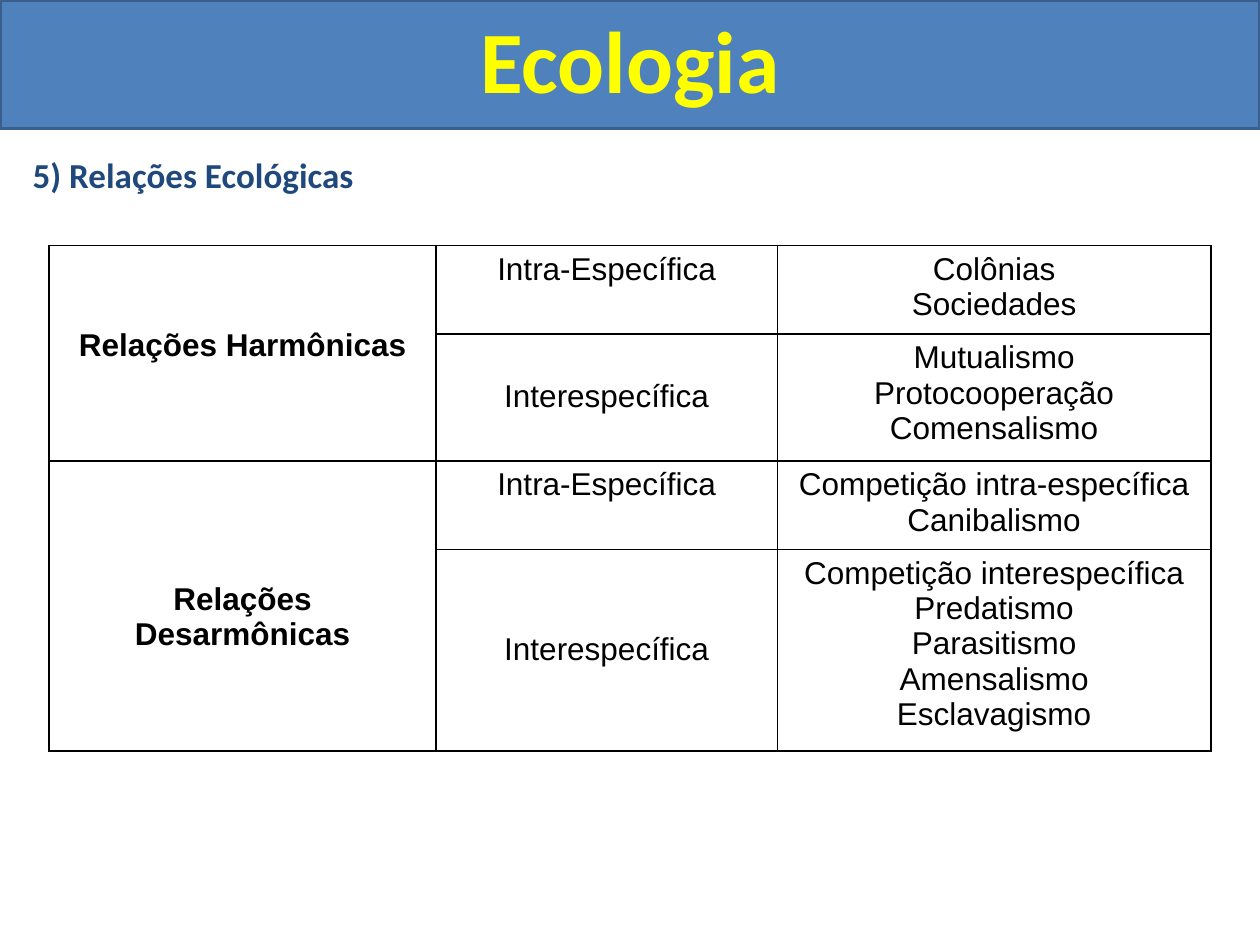
from lxml import etree
from pptx import Presentation
from pptx import util as u
from pptx.dml.color import RGBColor
from pptx.enum import shapes, text
from pptx.oxml.ns import qn

# Content
TITLE = "Ecologia"
HEADING = "5) Relações Ecológicas"
# group, then (kind, blank lines above the kind, examples)
RELATIONS = [
    ("Relações Harmônicas", 2, [
        ("Intra-Específica", 0, ["Colônias", "Sociedades"]),
        ("Interespecífica", 1, ["Mutualismo", "Protocooperação", "Comensalismo"]),
    ]),
    ("Relações Desarmônicas", 3, [
        ("Intra-Específica", 0, ["Competição intra-específica", "Canibalismo"]),
        ("Interespecífica", 2, ["Competição interespecífica", "Predatismo",
                                "Parasitismo", "Amensalismo", "Esclavagismo"]),
    ]),
]
COLORS = {"band": "4F81BD", "band_line": "3A5F8C", "title": "FFFF00",
          "heading": "1F497D", "table": "000000"}
COLUMN_WIDTHS = [7.8, 6.88, 8.74]
ROW_HEIGHTS = [1.78, 2.54, 1.78, 4.06]
LINE_DROP = 0.77
INSET = 0.13


def rgb(name):
    return RGBColor.from_string(COLORS[name])


def style(paragraph, size, face, color, bold, align):
    paragraph.alignment = align
    font = paragraph.font
    font.size, font.name, font.bold = u.Pt(size), face, bold
    font.color.rgb = rgb(color)


def add_label(slide, words, box, size, color, align):
    label = slide.shapes.add_textbox(*map(u.Cm, box)).text_frame
    label.word_wrap = True
    label.text = words
    style(label.paragraphs[0], size, "Calibri", color, True, align)


def add_borders(cell):
    properties = cell._tc.get_or_add_tcPr()
    for place, side in enumerate(("a:lnL", "a:lnR", "a:lnT", "a:lnB")):
        line = etree.Element(qn(side), w=str(u.Pt(1)))
        fill = etree.SubElement(line, qn("a:solidFill"))
        etree.SubElement(fill, qn("a:srgbClr"), val=COLORS["table"])
        properties.insert(place, line)


def fill_cell(cell, lines, drop=0, bold=False):
    cell.text = "\n".join(lines)
    cell.margin_top = u.Cm(INSET + drop * LINE_DROP)
    for paragraph in cell.text_frame.paragraphs:
        style(paragraph, 18, "Arial", "table", bold, text.PP_ALIGN.CENTER)


def main():
    prs = Presentation()
    prs.slide_width, prs.slide_height = u.Cm(25.4), u.Cm(19.05)
    slide = prs.slides.add_slide(prs.slide_layouts[6])

    # Section heading
    add_label(slide, HEADING, (0.41, 2.97, 24.41, 9.58), 20, "heading",
              text.PP_ALIGN.LEFT)

    # Title band
    band = slide.shapes.add_shape(shapes.MSO_SHAPE.RECTANGLE, 0, 0,
                                  prs.slide_width, u.Cm(2.59))
    band.shadow.inherit = False
    band.fill.solid()
    band.fill.fore_color.rgb = rgb("band")
    band.line.color.rgb = rgb("band_line")
    band.line.width = u.Pt(2)
    add_label(slide, TITLE, (0, 0, 25.4, 3.15), 50, "title",
              text.PP_ALIGN.CENTER)

    # Table of relations
    relations = slide.shapes.add_table(
        len(ROW_HEIGHTS), len(COLUMN_WIDTHS), u.Cm(0.99), u.Cm(4.95),
        u.Cm(sum(COLUMN_WIDTHS)), u.Cm(sum(ROW_HEIGHTS))).table
    relations.first_row = relations.horz_banding = False
    for column, width in zip(relations.columns, COLUMN_WIDTHS):
        column.width = u.Cm(width)
    for row, height in zip(relations.rows, ROW_HEIGHTS):
        row.height = u.Cm(height)
    for cell in relations.iter_cells():
        cell.fill.background()
        add_borders(cell)

    row = 0
    for group, group_drop, kinds in RELATIONS:
        group_cell = relations.cell(row, 0)
        group_cell.merge(relations.cell(row + len(kinds) - 1, 0))
        fill_cell(group_cell, [group], group_drop, bold=True)
        for kind, kind_drop, examples in kinds:
            fill_cell(relations.cell(row, 1), [kind], kind_drop)
            fill_cell(relations.cell(row, 2), examples)
            row += 1

    prs.save("out.pptx")


if __name__ == "__main__":
    main()
